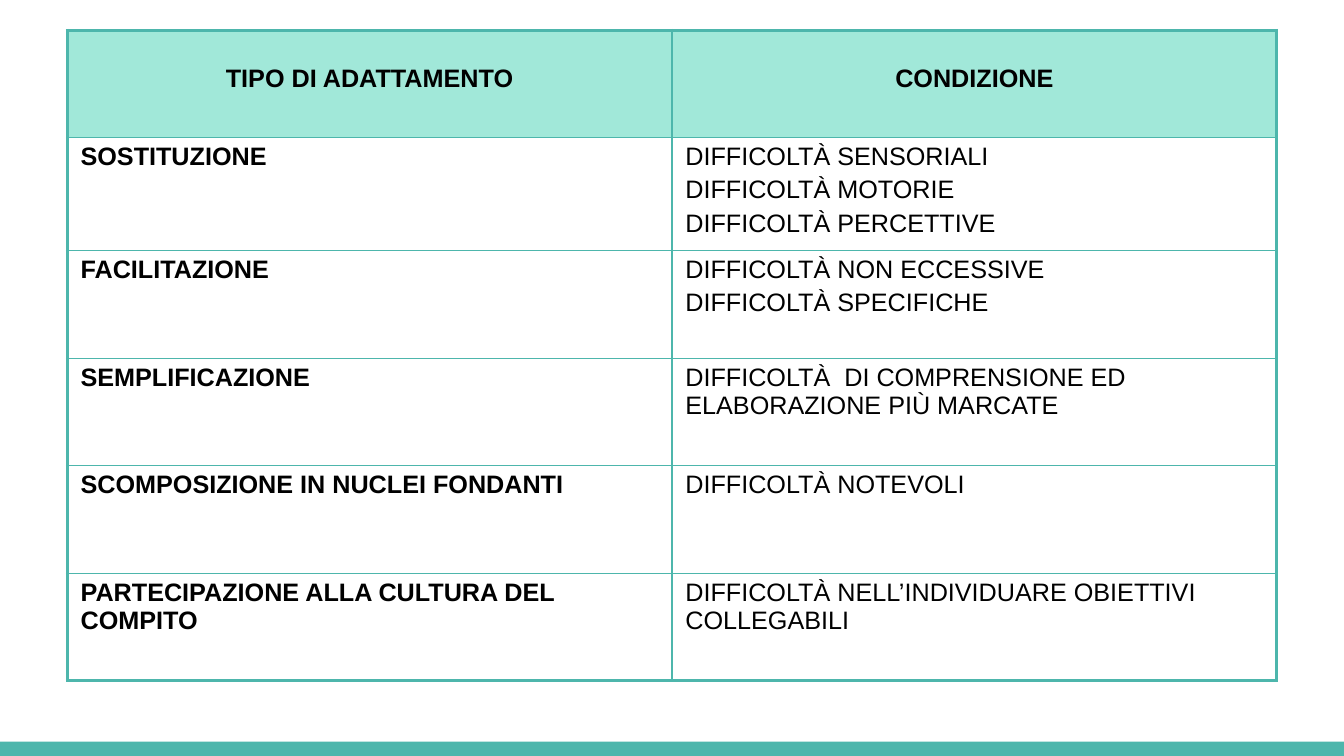
from dataclasses import dataclass

from lxml import etree
from pptx import Presentation
from pptx.dml.color import RGBColor
from pptx.enum.shapes import MSO_SHAPE
from pptx.enum.text import PP_ALIGN
from pptx.oxml.ns import qn
from pptx.util import Pt

RECT = MSO_SHAPE.RECTANGLE
LEFT, CENTER = PP_ALIGN.LEFT, PP_ALIGN.CENTER


@dataclass(frozen=True)
class Theme:
    """Colours, font and sizes of the slide."""

    teal: str = "4DB6AC"
    mint: str = "A1E8D9"
    white: str = "FFFFFF"
    black: str = "000000"
    font: str = "Arial"
    size: float = 18
    thick: float = 2.25
    thin: float = 1


THEME = Theme()
WIDE, HIGH = 960, 540
HEAD = ("TIPO DI ADATTAMENTO", "CONDIZIONE")
ROWS = [
    ("SOSTITUZIONE", "DIFFICOLTÀ SENSORIALI\nDIFFICOLTÀ MOTORIE\nDIFFICOLTÀ PERCETTIVE"),
    ("FACILITAZIONE", "DIFFICOLTÀ NON ECCESSIVE\nDIFFICOLTÀ SPECIFICHE"),
    ("SEMPLIFICAZIONE", "DIFFICOLTÀ  DI COMPRENSIONE ED ELABORAZIONE PIÙ MARCATE"),
    ("SCOMPOSIZIONE IN NUCLEI FONDANTI", "DIFFICOLTÀ NOTEVOLI"),
    (
        "PARTECIPAZIONE ALLA CULTURA DEL COMPITO",
        "DIFFICOLTÀ NELL’INDIVIDUARE OBIETTIVI COLLEGABILI",
    ),
]


def apply(item, values):
    """Set each attribute in values on item."""
    for name, value in values.items():
        setattr(item, name, value)


def paint(fill, color):
    """Give a fill one solid colour."""
    fill.solid()
    fill.fore_color.rgb = RGBColor.from_string(color)


def add_bar(slide, left, top, width, height):
    """Draw a plain teal band."""
    bar = slide.shapes.add_shape(RECT, Pt(left), Pt(top), Pt(width), Pt(height))
    bar.shadow.inherit = False
    bar.line.fill.background()
    paint(bar.fill, THEME.teal)


def edge_cell(cell, outer):
    """Draw the four borders of a cell, thick on the outer sides."""
    props = cell._tc.get_or_add_tcPr()
    for place, side in enumerate("LRTB"):
        width = THEME.thick if side in outer else THEME.thin
        line = etree.Element(qn(f"a:ln{side}"), w=str(Pt(width)))
        fill = etree.SubElement(line, qn("a:solidFill"))
        etree.SubElement(fill, qn("a:srgbClr"), val=THEME.teal)
        props.insert(place, line)


def fill_cell(cell, text, head, bold):
    """Write the lines of a cell and colour it."""
    apply(cell, {
        "margin_left": Pt(9.6),
        "margin_right": Pt(9.6),
        "margin_top": Pt(24.3 if head else 3.6),
        "margin_bottom": Pt(3.6),
    })
    paint(cell.fill, THEME.mint if head else THEME.white)
    cell.text = text
    for order, para in enumerate(cell.text_frame.paragraphs):
        apply(para, {
            "alignment": CENTER if head else LEFT,
            "space_before": Pt(3.6 if order else 0),
        })
        font = para.runs[0].font
        apply(font, {"name": THEME.font, "size": Pt(THEME.size), "bold": bold})
        font.color.rgb = RGBColor.from_string(THEME.black)


def add_grid(slide, rows, left, top, width, heights):
    """Add the table with equal columns and a heading row."""
    count = len(rows[0])
    frame = slide.shapes.add_table(
        len(rows), count, Pt(left), Pt(top), Pt(width), Pt(sum(heights))
    )
    grid = frame.table
    apply(grid, {"first_row": True, "horz_banding": False})
    for col in grid.columns:
        col.width = Pt(width / count)
    for y, (texts, height) in enumerate(zip(rows, heights)):
        grid.rows[y].height = Pt(height)
        for x, text in enumerate(texts):
            cell = grid.cell(y, x)
            fill_cell(cell, text, y == 0, y == 0 or x == 0)
            ends = {"L": x == 0, "R": x == count - 1, "T": y == 0, "B": y == len(rows) - 1}
            edge_cell(cell, [side for side, outer in ends.items() if outer])


def main():
    """Build and save the slide."""
    deck = Presentation()
    apply(deck, {"slide_width": Pt(WIDE), "slide_height": Pt(HIGH)})
    slide = deck.slides.add_slide(deck.slide_layouts[6])
    add_bar(slide, 0, HIGH - 10.2, WIDE, 10.2)
    heights = [76.8, 80.7] + [76.8] * 4
    add_grid(slide, [HEAD] + ROWS, 48, 21.6, 864, heights)
    deck.save("out.pptx")


if __name__ == "__main__":
    main()
